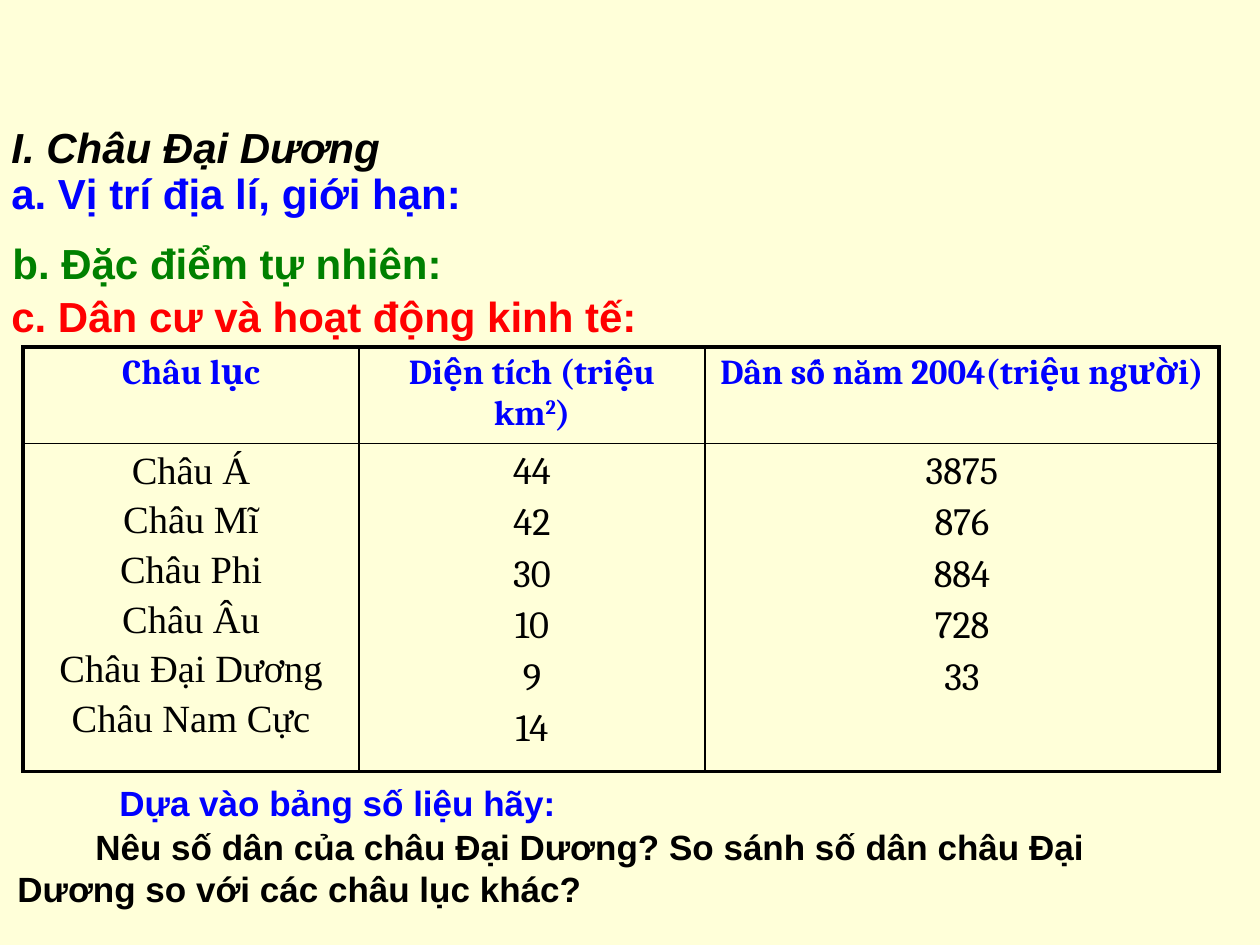
from lxml.etree import SubElement
from pptx import Presentation
from pptx.dml.color import RGBColor
from pptx.enum.text import MSO_AUTO_SIZE as AutoSize, PP_ALIGN as Align
from pptx.oxml.ns import qn
from pptx.util import Emu, Pt

PX = 914400 // 126
COLORS = {"paper": "FFFFD9", "black": "000000", "blue": "0000FF",
          "green": "008000", "red": "FF0000"}

# Text, (left, top, width, height), size, colour, italic, wrap, first-line indent
TEXTS = [
    ("I. Châu Đại Dương", (-1, 115, 577, 64), 24, "black", True, True, 0),
    ("a. Vị trí địa lí, giới hạn:", (-1, 161, 479, 64), 24, "blue", False, False, 0),
    ("b. Đặc điểm tự nhiên:", (0, 231, 459, 64), 24, "green", False, False, 0),
    ("c. Dân cư và hoạt động kinh tế:", (-1, 284, 680, 64), 24, "red", False, False, 0),
    ("Dựa vào bảng số liệu hãy:", (97, 775, 504, 55), 20, "blue", False, True, 10),
    ("Nêu số dân của châu Đại Dương? So sánh số dân châu Đại Dương so với "
     "các châu lục khác?", (5, 819, 1197, 97), 20, "black", False, True, 78),
]

# Each heading is a list of (text, superscript) runs
HEADINGS = [
    [("Châu lục", False)],
    [("Diện tích (triệu km", False), ("2", True), (")", False)],
    [("Dân số năm 2004(triệu người)", False)],
]
COLUMNS = [
    ("Times New Roman", ["Châu Á", "Châu Mĩ", "Châu Phi", "Châu Âu",
                         "Châu Đại Dương", "Châu Nam Cực"]),
    ("Cambria", ["44", "42", "30", "10", "9", "14"]),
    ("Cambria", ["3875", "876", "884", "728", "33"]),
]
TABLE_LEFT, TABLE_TOP = 23, 347
COLUMN_WIDTHS = [336, 346, 514]
ROW_HEIGHTS = [96, 328]
OUTER, INNER = 2.25, 1


def px(n):
    return Emu(n * PX)


def set_font(paragraph, name, size, color, bold=False, italic=False):
    font = paragraph.font
    font.name, font.size, font.bold, font.italic = name, Pt(size), bold, italic
    font.color.rgb = RGBColor.from_string(COLORS[color])


def add_text(slide, text, box, size, color, italic, wrap, indent):
    frame = slide.shapes.add_textbox(*map(px, box)).text_frame
    frame.word_wrap = wrap
    frame.auto_size = AutoSize.SHAPE_TO_FIT_TEXT
    paragraph = frame.paragraphs[0]
    paragraph.text = text
    if indent:
        paragraph._p.get_or_add_pPr().set("indent", str(px(indent)))
    set_font(paragraph, "Arial", size, color, True, italic)


def set_borders(cell, row, column):
    on_edge = {"lnL": column == 0, "lnR": column == len(COLUMNS) - 1,
               "lnT": row == 0, "lnB": row == len(ROW_HEIGHTS) - 1}
    properties = cell._tc.get_or_add_tcPr()
    for side, outer in on_edge.items():
        line = SubElement(properties, qn(f"a:{side}"),
                          w=str(Pt(OUTER if outer else INNER)))
        fill = SubElement(line, qn("a:solidFill"))
        SubElement(fill, qn("a:srgbClr"), val=COLORS["black"])


def fill_cell(cell, paragraphs, font, size, color, bold):
    frame = cell.text_frame
    for i, runs in enumerate(paragraphs):
        paragraph = frame.add_paragraph() if i else frame.paragraphs[0]
        paragraph.alignment = Align.CENTER
        if i:
            paragraph.space_before = Pt(4)
        for text, superscript in runs:
            run = paragraph.add_run()
            run.text = text
            if superscript:
                run._r.get_or_add_rPr().set("baseline", "30000")
        set_font(paragraph, font, size, color, bold)


def add_population_table(slide):
    table = slide.shapes.add_table(
        len(ROW_HEIGHTS), len(COLUMNS), px(TABLE_LEFT), px(TABLE_TOP),
        px(sum(COLUMN_WIDTHS)), px(sum(ROW_HEIGHTS))).table
    table.first_row = table.horz_banding = False
    for row, height in zip(table.rows, ROW_HEIGHTS):
        row.height = px(height)
    for c, (font, values) in enumerate(COLUMNS):
        table.columns[c].width = px(COLUMN_WIDTHS[c])
        fill_cell(table.cell(0, c), [HEADINGS[c]], "Cambria", 20, "blue", True)
        fill_cell(table.cell(1, c), [[(value, False)] for value in values],
                  font, 22, "black", False)
        for r in range(len(ROW_HEIGHTS)):
            set_borders(table.cell(r, c), r, c)
            table.cell(r, c).fill.background()


def main():
    deck = Presentation()
    deck.slide_width, deck.slide_height = px(1260), px(945)
    slide = deck.slides.add_slide(deck.slide_layouts[6])
    background = slide.background.fill
    background.solid()
    background.fore_color.rgb = RGBColor.from_string(COLORS["paper"])

    # Section headings, then the table, then the question below it
    for entry in TEXTS[:-1]:
        add_text(slide, *entry)
    add_population_table(slide)
    add_text(slide, *TEXTS[-1])
    deck.save("out.pptx")


if __name__ == "__main__":
    main()
